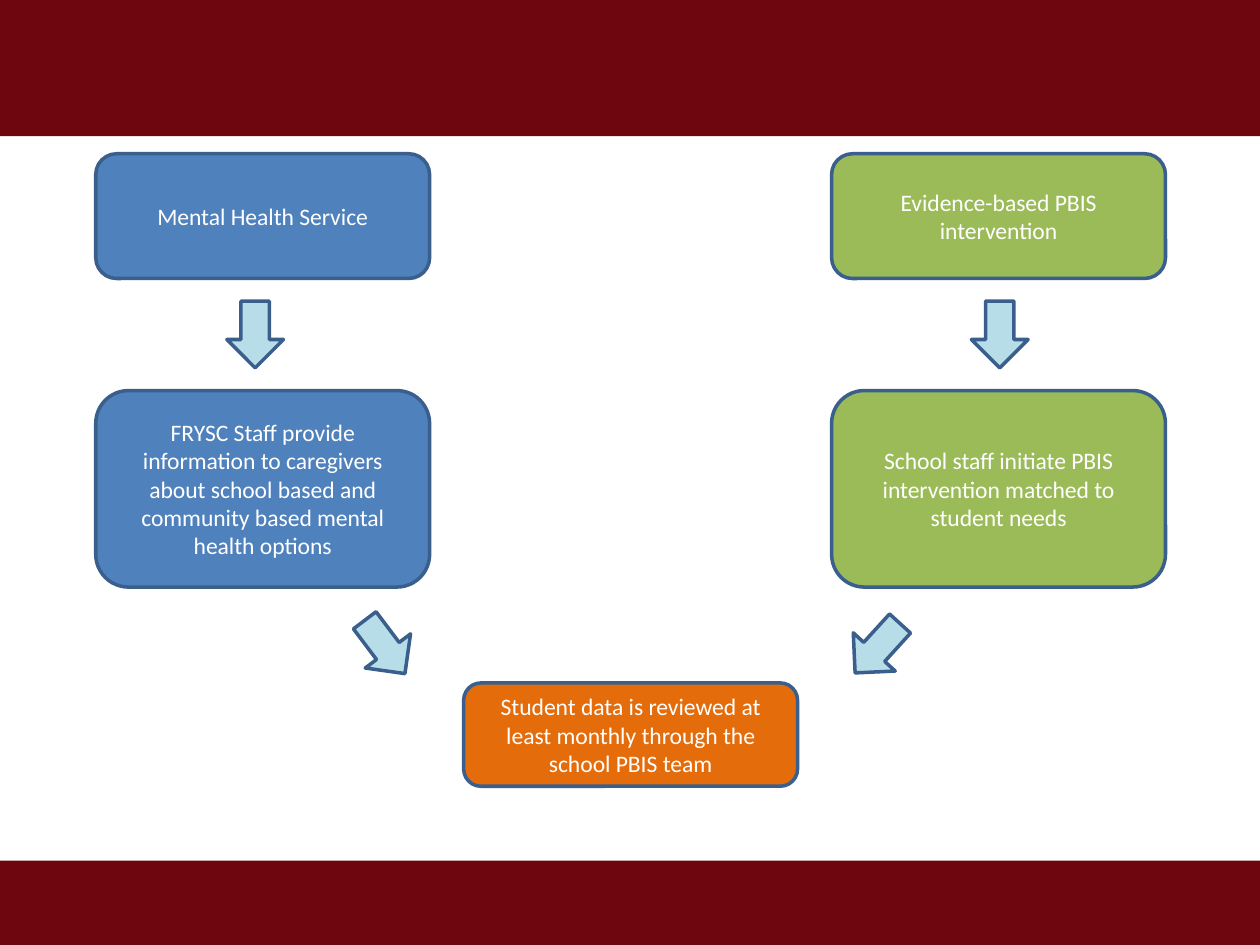
from pptx import Presentation
from pptx.dml.color import RGBColor
from pptx.enum.shapes import MSO_SHAPE as SHAPE
from pptx.enum.text import MSO_ANCHOR as ANCHOR, PP_ALIGN as ALIGN
from pptx.util import Inches, Pt

MAROON = RGBColor(0x6E, 0x06, 0x10)
BLUE = RGBColor(0x4F, 0x81, 0xBD)
GREEN = RGBColor(0x9B, 0xBB, 0x59)
ORANGE = RGBColor(0xE4, 0x6C, 0x0A)
PALE_BLUE = RGBColor(0xB7, 0xDE, 0xE8)
OUTLINE = RGBColor(0x3A, 0x5F, 0x8C)
WHITE = RGBColor(0xFF, 0xFF, 0xFF)

BOX_W = 2.65
LEFT_X, MIDDLE_X, RIGHT_X = 0.76, 3.68, 6.6
START_Y, START_H = 1.22, 0.99
ACTION_Y, ACTION_H = 3.1, 1.56


def add_filled(slide, kind, x, y, w, h, fill, outlined=True):
    sp = slide.shapes.add_shape(kind, Inches(x), Inches(y), Inches(w), Inches(h))
    sp.shadow.inherit = False
    sp.fill.solid()
    sp.fill.fore_color.rgb = fill
    if outlined:
        sp.line.color.rgb = OUTLINE
        sp.line.width = Pt(2)
    else:
        sp.line.fill.background()
    return sp


def add_band(slide, y, h):
    add_filled(slide, SHAPE.RECTANGLE, 0, y, 10, h, MAROON, outlined=False)


def add_step(slide, x, y, h, fill, text):
    sp = add_filled(slide, SHAPE.ROUNDED_RECTANGLE, x, y, BOX_W, h, fill)
    tf = sp.text_frame
    tf.word_wrap = True
    tf.vertical_anchor = ANCHOR.MIDDLE
    p = tf.paragraphs[0]
    p.text = text
    p.alignment = ALIGN.CENTER
    p.font.name = "Calibri"
    p.font.size = Pt(13.5)
    p.font.color.rgb = WHITE


def add_arrow(slide, x, y, rotation=0):
    sp = add_filled(slide, SHAPE.DOWN_ARROW, x, y, 0.45, 0.53, PALE_BLUE)
    sp.rotation = rotation


def main():
    prs = Presentation()
    prs.slide_width, prs.slide_height = Inches(10), Inches(7.5)
    slide = prs.slides.add_slide(prs.slide_layouts[6])

    # Header and footer bands
    add_band(slide, 0, 1.08)
    add_band(slide, 6.83, 0.67)

    # Two parallel tracks: starting point, then action
    tracks = [
        (LEFT_X, BLUE, "Mental Health Service",
         "FRYSC Staff provide information to caregivers about school based "
         "and community based mental health options"),
        (RIGHT_X, GREEN, "Evidence-based PBIS intervention",
         "School staff initiate PBIS intervention matched to student needs"),
    ]
    for x, fill, start, action in tracks:
        add_step(slide, x, START_Y, START_H, fill, start)
        add_step(slide, x, ACTION_Y, ACTION_H, fill, action)

    # Shared review step
    add_step(slide, MIDDLE_X, 5.42, 0.82, ORANGE,
             "Student data is reviewed at least monthly through the school PBIS team")

    # Arrows down each track, then inward to the review
    for x, y, rotation in [(1.8, 2.39, 0), (7.71, 2.39, 0),
                           (2.83, 4.87, 323), (6.74, 4.88, 42.3)]:
        add_arrow(slide, x, y, rotation)

    prs.save("out.pptx")


if __name__ == "__main__":
    main()
